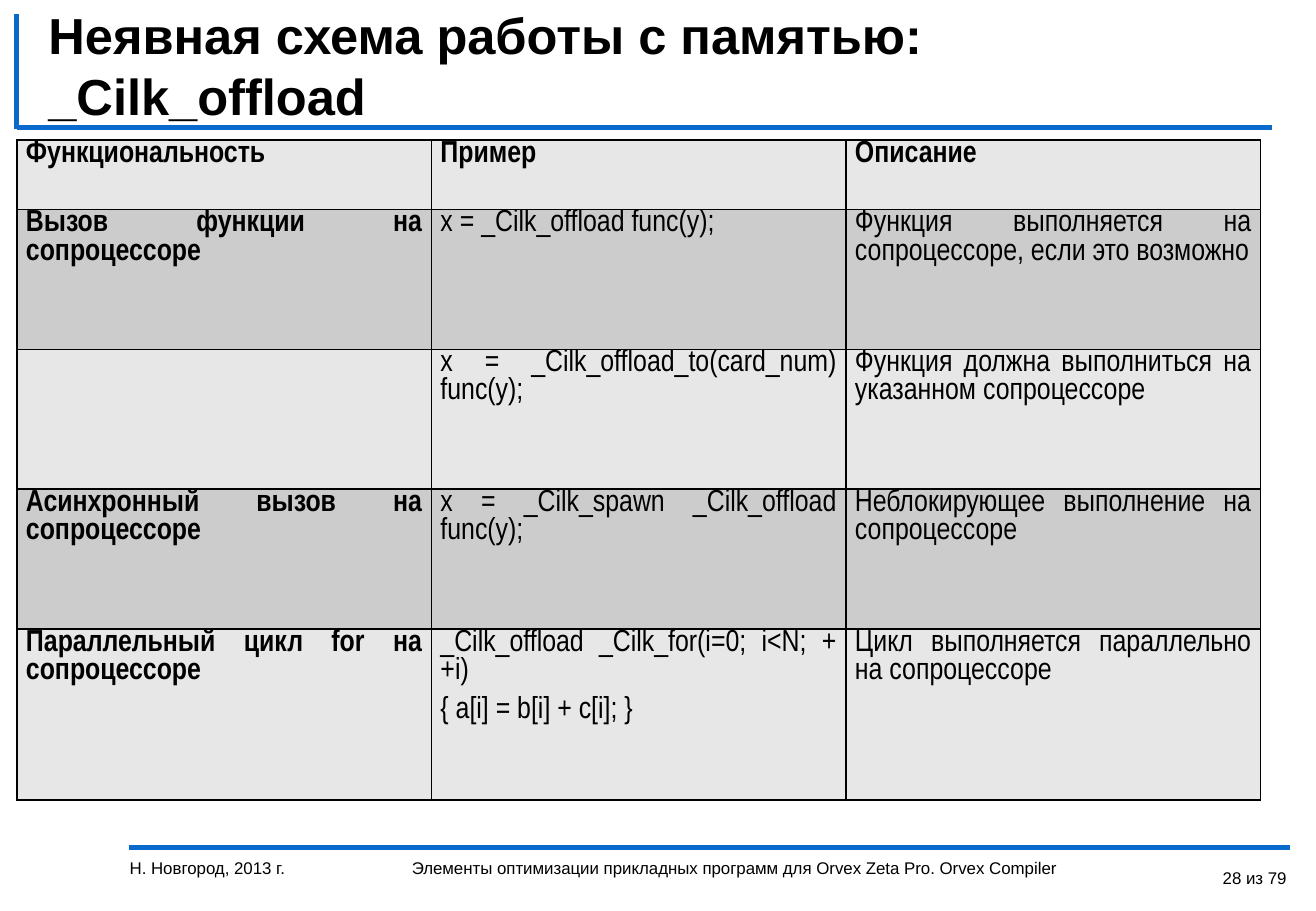
"""Slide with a table of the implicit memory model of _Cilk_offload."""
from lxml import etree
from pptx import Presentation
from pptx import util as u
from pptx.dml.color import RGBColor
from pptx.enum import shapes, text
from pptx.oxml import ns

HUES = {"ink": "000000", "rule": "0969CD", "light": "E7E7E7", "dark": "CCCCCC"}
ALIGN = text.PP_ALIGN
ROWS = [
    ("Функциональность", "Пример", "Описание"),
    ("Вызов функции на сопроцессоре", "x = _Cilk_offload func(y);",
     "Функция выполняется на сопроцессоре, если это возможно"),
    ("", "x = _Cilk_offload_to(card_num) func(y);",
     "Функция должна выполниться на указанном сопроцессоре"),
    ("Асинхронный вызов на сопроцессоре", "x = _Cilk_spawn _Cilk_offload func(y);",
     "Неблокирующее выполнение на сопроцессоре"),
    ("Параллельный цикл for на сопроцессоре",
     "_Cilk_offload _Cilk_for(i=0; i<N; ++i)\n{ a[i] = b[i] + c[i]; }",
     "Цикл выполняется параллельно на сопроцессоре"),
]


class Deck:
    def __init__(self, wide, high):
        self.prs = Presentation()
        self.prs.slide_width, self.prs.slide_height = u.Pt(wide), u.Pt(high)
        self.slide = self.prs.slides.add_slide(self.prs.slide_layouts[6])
        self.base = {"name": "Arial", "size": u.Pt(10), "bold": False}

    def tint(self, hue):
        return RGBColor.from_string(HUES[hue])

    def fill_text(self, frame, words, form, para):
        frame.text = words
        for par in frame.paragraphs:
            for key, val in para.items():
                setattr(par, key, val)
            for key, val in {**self.base, **form}.items():
                setattr(par.font, key, val)
            par.font.color.rgb = self.tint("ink")

    def label(self, box, words, form={}, para={}, anchor=text.MSO_ANCHOR.TOP):
        frame = self.slide.shapes.add_textbox(*map(u.Pt, box)).text_frame
        frame.word_wrap = True
        frame.vertical_anchor = anchor
        self.fill_text(frame, words, form, para)

    def rule(self, *ends):
        line = self.slide.shapes.add_connector(
            shapes.MSO_CONNECTOR.STRAIGHT, *map(u.Pt, ends))
        line.line.color.rgb = self.tint("rule")
        line.line.width = u.Pt(3)
        etree.SubElement(line._element.spPr, ns.qn("a:effectLst"))

    def edge(self, cell):
        props = cell._tc.get_or_add_tcPr()
        for spot, side in enumerate(("lnL", "lnR", "lnT", "lnB")):
            line = etree.Element(ns.qn("a:" + side), w=str(u.Pt(1)))
            fill = etree.SubElement(line, ns.qn("a:solidFill"))
            etree.SubElement(fill, ns.qn("a:srgbClr"), val=HUES["ink"])
            props.insert(spot, line)

    def table(self, left, top, width, highs, rows):
        count = len(rows[0])
        grid = self.slide.shapes.add_table(
            len(rows), count, *map(u.Pt, (left, top, width * count, sum(highs)))).table
        for col in grid.columns:
            col.width = u.Pt(width)
        pads = {"margin_left": u.Pt(5.4), "margin_right": u.Pt(5.4),
                "margin_top": 0, "margin_bottom": 0}
        para = {"alignment": ALIGN.JUSTIFY, "space_after": u.Pt(6)}
        for r, (high, row) in enumerate(zip(highs, rows)):
            grid.rows[r].height = u.Pt(high)
            for c, words in enumerate(row):
                cell = grid.cell(r, c)
                for key, val in pads.items():
                    setattr(cell, key, val)
                cell.fill.solid()
                cell.fill.fore_color.rgb = self.tint("dark" if r % 2 else "light")
                self.edge(cell)
                form = {"name": "Arial Narrow", "size": u.Pt(18),
                        "bold": r == 0 or c == 0}
                self.fill_text(cell.text_frame, words, form, para)


def main():
    deck = Deck(780, 540)
    deck.rule(76.4, 502.4, 764.6, 502.4)
    deck.rule(10, 75.8, 754, 75.8)
    deck.rule(10, 8.6, 10, 76.4)
    deck.label((21.6, 16.6, 715, 44), "Неявная схема работы с памятью: _Cilk_offload",
               {"size": u.Pt(30), "bold": True}, anchor=text.MSO_ANCHOR.MIDDLE)
    deck.table(10, 83, 245.7, (41.2, 82.9, 82.9, 82.9, 101.4), ROWS)
    deck.label((69.8, 504.7, 161, 35), "Н. Новгород, 2013 г.")
    deck.label((237, 504.7, 453.6, 35),
               "Элементы оптимизации прикладных программ для Orvex Zeta Pro. Orvex Compiler")
    deck.label((696.2, 504.7, 73.4, 35), "28 из 79",
               para={"alignment": ALIGN.RIGHT, "line_spacing": 1.5})
    deck.prs.save("out.pptx")


if __name__ == "__main__":
    main()
